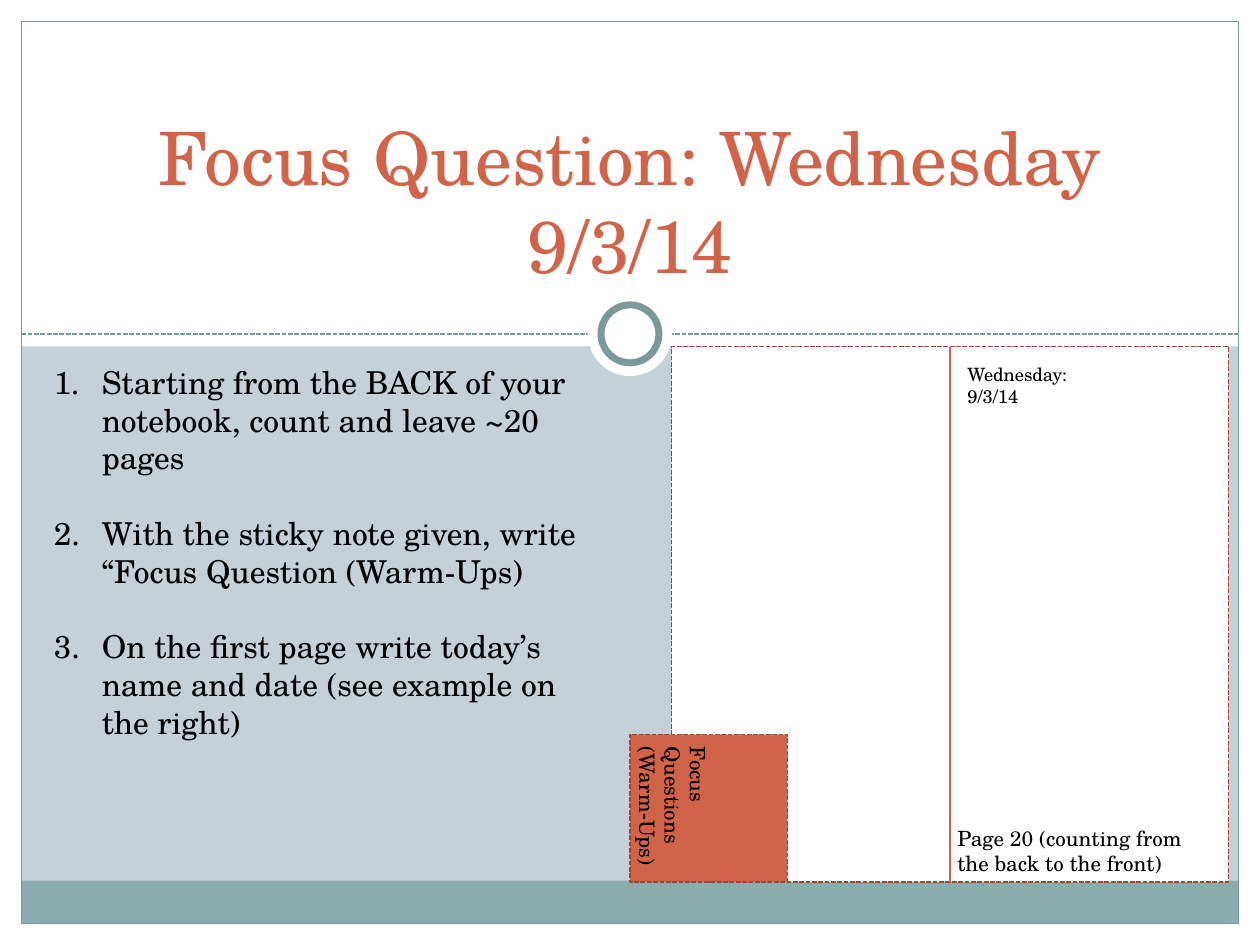
from lxml import etree
from pptx import Presentation
from pptx.dml.color import RGBColor
from pptx.enum.dml import MSO_LINE
from pptx.enum.shapes import MSO_CONNECTOR, MSO_SHAPE
from pptx.enum.text import MSO_ANCHOR, MSO_AUTO_SIZE, PP_ALIGN
from pptx.oxml.ns import qn
from pptx.util import Inches, Pt

RECTANGLE, OVAL = MSO_SHAPE.RECTANGLE, MSO_SHAPE.OVAL
STRAIGHT = MSO_CONNECTOR.STRAIGHT
DASH = MSO_LINE.SQUARE_DOT
TOP, BOTTOM = 0, 2

FONT = "TeX Gyre Schola"
WHITE = RGBColor(0xFF, 0xFF, 0xFF)
BLACK = RGBColor(0, 0, 0)
MIST = RGBColor(0xC5, 0xD1, 0xD7)
TEAL = RGBColor(0x8C, 0xAD, 0xAE)
SLATE = RGBColor(0x7C, 0x99, 0x9A)
ORANGE = RGBColor(0xD1, 0x63, 0x49)
RUST = RGBColor(0x9B, 0x49, 0x36)

WIDTH, HEIGHT, MARGIN = 10, 7.5, 0.17
HEADER_BOTTOM, DIVIDER_Y = 2.75, 2.65

TITLE = "Focus Question: Wednesday 9/3/14"
STEPS = [
    "Starting from the BACK of your notebook, count and leave ~20 pages",
    "With the sticky note given, write “Focus Question (Warm-Ups)",
    "On the first page write today’s name and date (see example on the right)",
]
# text, left, top, width, height, size, rotation
LABELS = [
    ("Focus Questions (Warm-Ups)", 4.75, 6.06, 1.17, 0.71, 12, 90),
    ("Page 20 (counting from the back to the front)", 7.5, 6.5, 2.25, 0.5, 12, 0),
    ("Wednesday: 9/3/14", 7.58, 2.83, 1, 0.45, 10.5, 0),
]
# left, top, width, height, fill
BANDS = [
    (0, HEIGHT - MARGIN, WIDTH, MARGIN, WHITE),
    (WIDTH - MARGIN, 0, MARGIN, HEIGHT, WHITE),
    (0, 0, MARGIN, HEIGHT, WHITE),
    (0, 0, WIDTH, HEADER_BOTTOM, WHITE),
    (MARGIN, 6.99, WIDTH - 2 * MARGIN, 0.34, TEAL),
]


def style_line(line, color, width, dash=None):
    line.color.rgb = color
    line.width = Pt(width)
    if dash:
        line.dash_style = dash


def add_box(page, kind, left, top, width, height, fill=None, line=None):
    """Add a preset shape; line is (color, points[, dash])."""
    box = page.shapes.add_shape(
        kind, Inches(left), Inches(top), Inches(width), Inches(height))
    box.shadow.inherit = False
    if fill is None:
        box.fill.background()
    else:
        box.fill.solid()
        box.fill.fore_color.rgb = fill
    if line:
        style_line(box.line, *line)
    else:
        box.line.fill.background()
    return box


def add_line(page, x1, y1, x2, y2, *line):
    connector = page.shapes.add_connector(
        STRAIGHT, Inches(x1), Inches(y1), Inches(x2), Inches(y2))
    etree.SubElement(connector.line._get_or_add_ln().getparent(), qn("a:effectLst"))
    style_line(connector.line, *line)
    return connector


def add_span(para, text, size, color=BLACK):
    span = para.add_run()
    span.text = text
    span.font.name = FONT
    span.font.size = Pt(size)
    span.font.color.rgb = color


def add_text_frame(page, left, top, width, height, rotation=0):
    box = page.shapes.add_textbox(
        Inches(left), Inches(top), Inches(width), Inches(height))
    box.rotation = rotation
    box.text_frame.word_wrap = True
    return box.text_frame


def number_paragraph(para, indent):
    properties = para._p.get_or_add_pPr()
    properties.set("marL", str(Inches(indent)))
    properties.set("indent", str(-Inches(indent)))
    etree.SubElement(properties, qn("a:buFont"), typeface="+mj-lt")
    etree.SubElement(properties, qn("a:buAutoNum"), type="arabicPeriod")


def add_backdrop(page):
    page.background.fill.solid()
    page.background.fill.fore_color.rgb = MIST
    for left, top, width, height, fill in BANDS:
        add_box(page, RECTANGLE, left, top, width, height, fill)
    add_line(page, MARGIN, DIVIDER_Y, WIDTH - MARGIN, DIVIDER_Y, SLATE, 0.9, DASH)
    add_box(page, RECTANGLE, MARGIN, MARGIN, WIDTH - 2 * MARGIN,
            HEIGHT - 2 * MARGIN, line=(SLATE, 0.75))
    for size, line in [(0.67, None), (0.46, (SLATE, 4))]:
        add_box(page, OVAL, (WIDTH - size) / 2, DIVIDER_Y - size / 2,
                size, size, WHITE, line)


def add_title(page):
    title = page.shapes.title
    title.left, title.top = Inches(0.75), Inches(0.42)
    title.width, title.height = Inches(8.5), Inches(1.92)
    frame = title.text_frame
    frame.word_wrap = True
    frame.auto_size = MSO_AUTO_SIZE.NONE
    frame.vertical_anchor = MSO_ANCHOR.BOTTOM
    para = frame.paragraphs[0]
    para.alignment = PP_ALIGN.CENTER
    add_span(para, TITLE, 42, ORANGE)
    # Bring the title in front of the header band.
    page.shapes._spTree.append(title._element)


def add_steps(page):
    frame = add_text_frame(page, 0.33, 2.83, 4.5, 3.13)
    for index, step in enumerate(STEPS):
        para = frame.add_paragraph() if index else frame.paragraphs[0]
        if index:
            para.space_before = Pt(21.6)
        number_paragraph(para, 0.38)
        add_span(para, step, 18)


def add_notebook(page):
    outline = (RUST, 0.9, DASH)
    notebook = add_box(page, RECTANGLE, 5.33, HEADER_BOTTOM, 4.42, 4.25, WHITE, outline)
    fold = add_line(page, 7.54, HEADER_BOTTOM, 7.54, 7, ORANGE, 0.75)
    fold.begin_connect(notebook, TOP)
    fold.end_connect(notebook, BOTTOM)
    add_box(page, RECTANGLE, 5, 5.83, 1.25, 1.17, ORANGE, outline)
    for text, left, top, width, height, size, rotation in LABELS:
        frame = add_text_frame(page, left, top, width, height, rotation)
        add_span(frame.paragraphs[0], text, size)


def main():
    deck = Presentation()
    deck.slide_width, deck.slide_height = Inches(WIDTH), Inches(HEIGHT)
    page = deck.slides.add_slide(deck.slide_layouts[5])
    add_backdrop(page)
    add_title(page)
    add_steps(page)
    add_notebook(page)
    deck.save("out.pptx")


if __name__ == "__main__":
    main()
